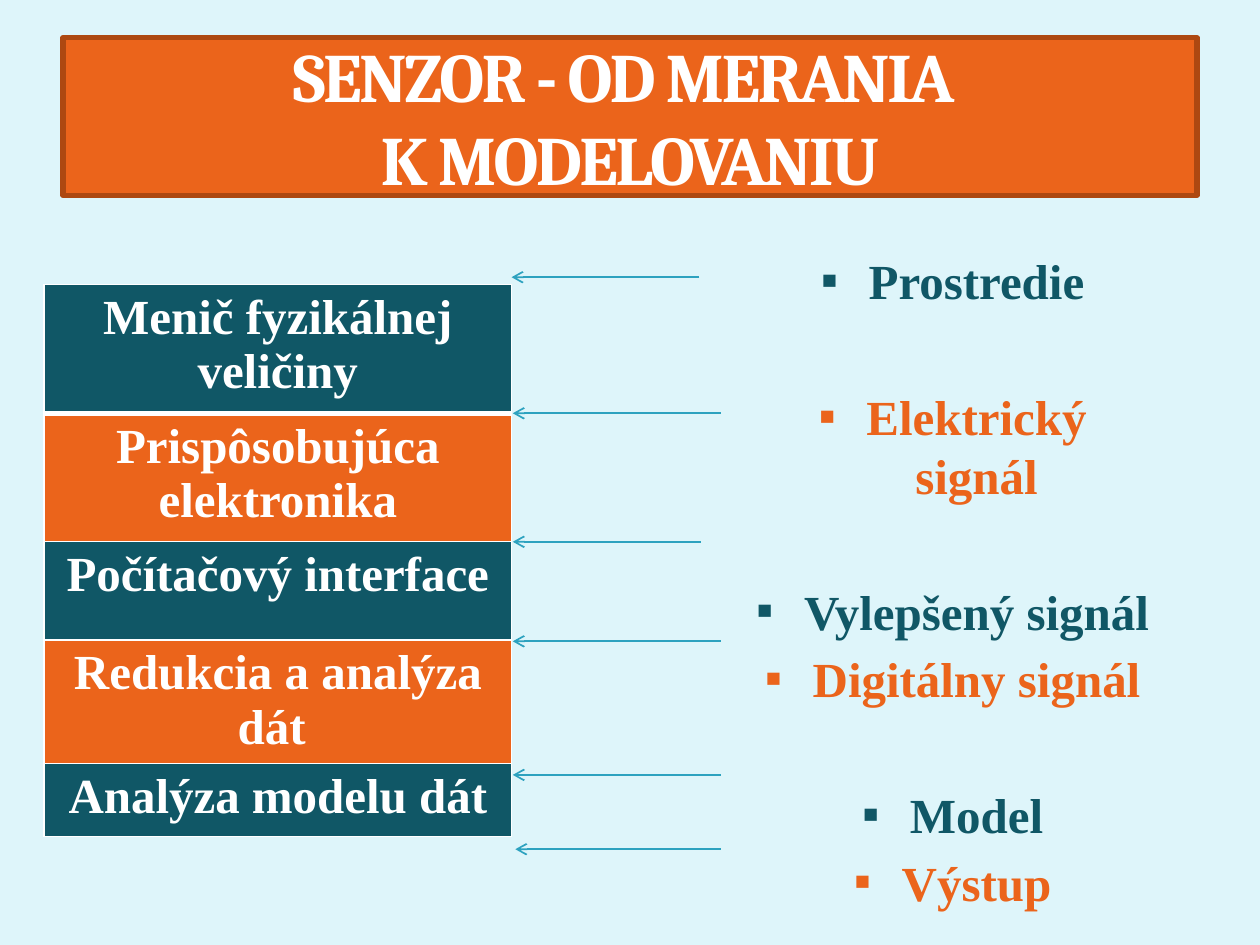
"""Build the slide on sensors, from measurement to modelling."""
import pptx
import pptx.util
import pptx.dml.color
import pptx.enum.shapes
import pptx.enum.text
import pptx.oxml
import pptx.oxml.ns

Inches = pptx.util.Inches
Pt = pptx.util.Pt
RGBColor = pptx.dml.color.RGBColor
CENTER = pptx.enum.text.PP_ALIGN.CENTER
MIDDLE = pptx.enum.text.MSO_ANCHOR.MIDDLE
PALE = RGBColor(0xDE, 0xF5, 0xFA)
WHITE = RGBColor(0xFF, 0xFF, 0xFF)
TEAL = RGBColor(0x10, 0x57, 0x66)
ORANGE = RGBColor(0xEB, 0x64, 0x1B)
RUST = RGBColor(0xAD, 0x48, 0x11)
CYAN = RGBColor(0x2D, 0xA2, 0xBF)


def add_xml(parent, tag, body="", position=None):
    name = tag.split()[0]
    element = pptx.oxml.parse_xml(
        f"<a:{tag} {pptx.oxml.ns.nsdecls('a')}>{body}</a:{name}>")
    parent.insert(len(parent) if position is None else position, element)


def add_run(paragraph, text, color, size=28, font="Times New Roman"):
    paragraph.alignment = CENTER
    run = paragraph.add_run()
    run.text = text
    run.font.name = font
    run.font.size = Pt(size)
    run.font.bold = True
    run.font.color.rgb = color
    return run


presentation = pptx.Presentation()
presentation.slide_width = Inches(10)
presentation.slide_height = Inches(7.5)
slide = presentation.slides.add_slide(presentation.slide_layouts[6])
slide.background.fill.solid()
slide.background.fill.fore_color.rgb = PALE

title = slide.shapes.add_shape(
    pptx.enum.shapes.MSO_SHAPE.RECTANGLE,
    Inches(0.5), Inches(0.3), Inches(9), Inches(1.25))
title.shadow.inherit = False
title.fill.solid()
title.fill.fore_color.rgb = ORANGE
title.line.color.rgb = RUST
title.line.width = Pt(3)
title.text_frame.word_wrap = True
title.text_frame.vertical_anchor = MIDDLE
heading = title.text_frame.paragraphs[0]
for index, words in enumerate(["SENZOR - OD MERANIA ", "K MODELOVANIU"]):
    if index:
        heading.add_line_break()
    run = add_run(heading, words, WHITE, 39.6, "Cambria")
    run.font._element.set("spc", "-150")

stages = [
    ("Menič fyzikálnej veličiny", 1.02),
    ("Prispôsobujúca elektronika", 1.02),
    ("Počítačový interface", 0.78),
    ("Redukcia a analýza dát ", 0.98),
    ("Analýza modelu dát", 0.58),
]
stage_table = slide.shapes.add_table(
    len(stages), 1, Inches(0.35), Inches(2.26), Inches(3.71),
    Inches(sum(height for _, height in stages))).table
for index, (stage, height) in enumerate(stages):
    stage_table.rows[index].height = Inches(height)
    cell = stage_table.cell(index, 0)
    cell.margin_left = cell.margin_right = Inches(0.12)
    cell.margin_top = cell.margin_bottom = Inches(0.05)
    cell.fill.solid()
    cell.fill.fore_color.rgb = ORANGE if index % 2 else TEAL
    add_run(cell.text_frame.paragraphs[0], stage, WHITE)
    widths = {"L": 1, "R": 1, "T": 3 if index == 1 else 1, "B": 3 if index == 0 else 1}
    for position, (side, width) in enumerate(widths.items()):
        add_xml(cell._tc.get_or_add_tcPr(), f'ln{side} w="{Pt(width)}"',
                f'<a:solidFill><a:srgbClr val="{WHITE}"/></a:solidFill>', position)

signals = [
    ("Prostredie", TEAL, 0),
    ("Elektrický signál", ORANGE, 44),
    ("Vylepšený signál", TEAL, 44),
    ("Digitálny signál", ORANGE, 5),
    ("Model", TEAL, 44),
    ("Výstup", ORANGE, 5),
]
signal_frame = slide.shapes.add_textbox(
    Inches(5.87), Inches(1.94), Inches(3.38), Inches(5.12)).text_frame
signal_frame.word_wrap = True
for index, (signal, color, gap) in enumerate(signals):
    paragraph = signal_frame.add_paragraph() if index else signal_frame.paragraphs[0]
    paragraph.space_before = Pt(gap)
    add_run(paragraph, signal, color)
    properties = paragraph._p.get_or_add_pPr()
    properties.set("marL", str(Inches(0.38)))
    properties.set("indent", str(-Inches(0.38)))
    add_xml(properties, 'buFont typeface="Times New Roman"')
    add_xml(properties, 'buChar char="▪"')

arrows = [
    (5.55, 4.06, 2.2),
    (5.72, 4.07, 3.28),
    (5.56, 4.07, 4.3),
    (5.72, 4.07, 5.09),
    (5.72, 4.07, 6.15),
    (5.72, 4.09, 6.74),
]
for start, end, height in arrows:
    arrow = slide.shapes.add_connector(
        pptx.enum.shapes.MSO_CONNECTOR.STRAIGHT,
        Inches(start), Inches(height), Inches(end), Inches(height))
    arrow.line.color.rgb = CYAN
    arrow.line.width = Pt(1)
    add_xml(arrow.line._get_or_add_ln(), 'tailEnd type="arrow"')
    add_xml(arrow._element.spPr, "effectLst")

presentation.save("out.pptx")
